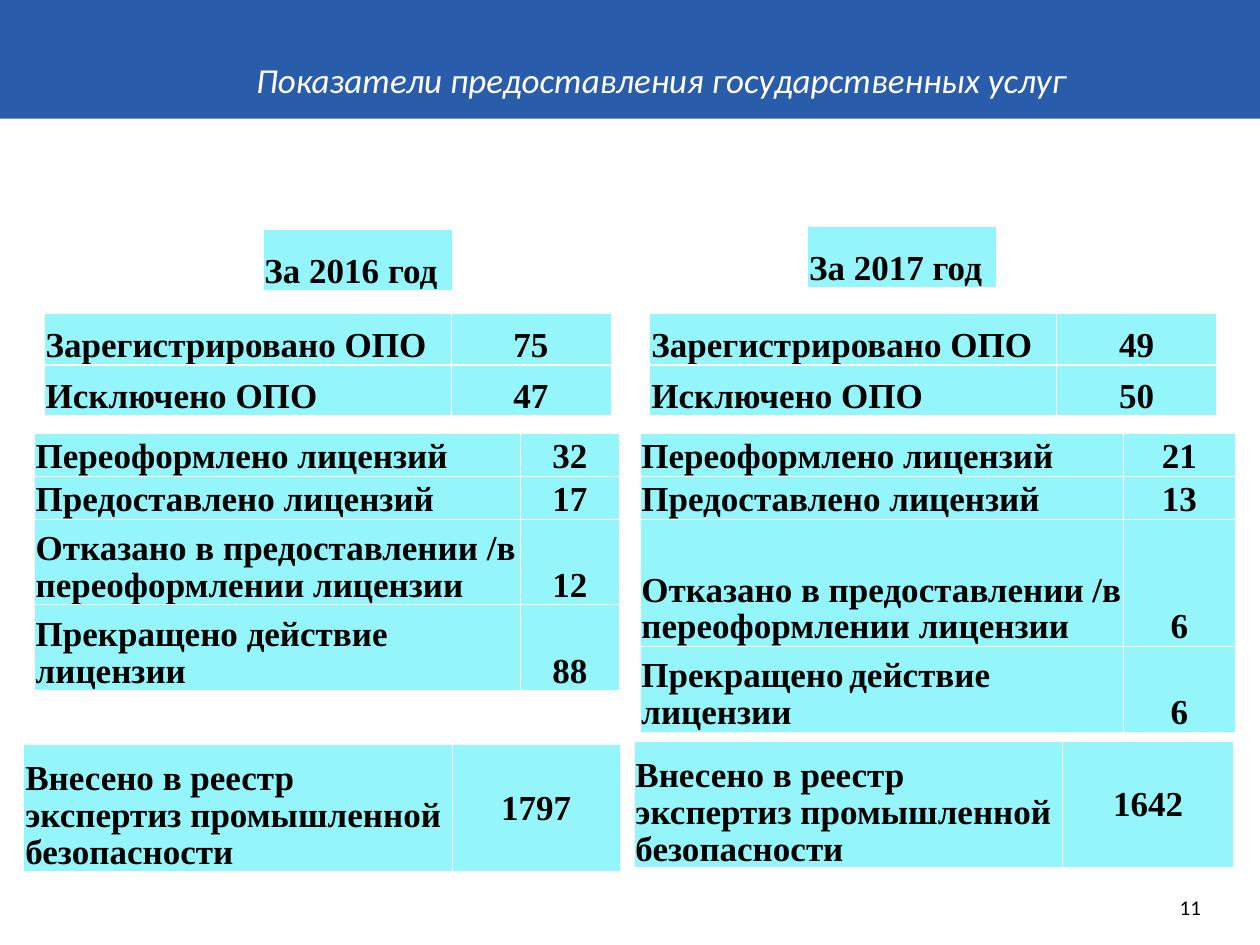
"""Builds the slide that compares public service figures for 2016 and 2017."""
import pptx
import pptx.dml.color
import pptx.enum.text
import pptx.oxml
import pptx.oxml.ns
import pptx.util

Cm = pptx.util.Cm
Pt = pptx.util.Pt
Align = pptx.enum.text.PP_ALIGN
Anchor = pptx.enum.text.MSO_ANCHOR

HUES = {"band": "2A5CAC", "cell": "94F5FA", "ink": "000000", "white": "FFFFFF"}
SERIF = "Times New Roman"
SANS = "Calibri"


def tint(name):
    return pptx.dml.color.RGBColor.from_string(HUES[name])


class Deck:
    """Holds the style and the current slide."""

    def __init__(self):
        self.file = pptx.Presentation()
        self.file.slide_width = Cm(25.4)
        self.file.slide_height = Cm(19.05)
        self.slide = self.file.slides.add_slide(self.file.slide_layouts[5])

    def run(self, para, text, size, face, hue="ink", bold=False, slant=False):
        run = para.add_run()
        run.text = text
        font = run.font
        font.size, font.name = Pt(size), face
        font.bold, font.italic = bold, slant
        font.color.rgb = tint(hue)

    def inset(self, frame, left=0, top=0, right=0, bottom=0):
        frame.margin_left, frame.margin_right = Cm(left), Cm(right)
        frame.margin_top, frame.margin_bottom = Cm(top), Cm(bottom)

    def title(self, text):
        shape = self.slide.shapes.title
        shape.left, shape.top = Cm(0), Cm(0)
        shape.width, shape.height = self.file.slide_width, Cm(2.39)
        shape.fill.solid()
        shape.fill.fore_color.rgb = tint("band")
        frame = shape.text_frame
        frame.auto_size = pptx.enum.text.MSO_AUTO_SIZE.NONE
        frame.vertical_anchor = Anchor.BOTTOM
        self.inset(frame, left=1.52, right=0.25, bottom=0.36)
        para = frame.paragraphs[0]
        para.alignment = Align.CENTER
        self.run(para, text, 20, SANS, "white", slant=True)

    def number(self, text):
        box = self.slide.shapes.add_textbox(Cm(22.1), Cm(18.03), Cm(2.11), Cm(1.02))
        frame = box.text_frame
        frame.word_wrap = True
        self.inset(frame)
        para = frame.paragraphs[0]
        para.alignment = Align.RIGHT
        self.run(para, text, 12, SANS)

    def edge(self, cell, side, width):
        line = pptx.oxml.parse_xml(
            f'<a:ln{side} {pptx.oxml.ns.nsdecls("a")} w="{Pt(width)}"><a:solidFill>'
            f'<a:srgbClr val="{HUES["white"]}"/></a:solidFill></a:ln{side}>')
        cell._tc.get_or_add_tcPr().append(line)

    def cell(self, cell, parts, thick, centred, anchor):
        for side in "LRTB":
            self.edge(cell, side, 1.47 if side == thick else 0.45)
        cell.fill.solid()
        cell.fill.fore_color.rgb = tint("cell")
        self.inset(cell, left=0.03, top=0.04, right=0.03)
        cell.vertical_anchor = anchor
        para = cell.text_frame.paragraphs[0]
        para.line_spacing = 0.95
        para.alignment = Align.CENTER if centred else Align.LEFT
        for part in parts:
            if part == " ":
                self.run(para, part, 14, "Cambria")
            else:
                self.run(para, part, 20, SERIF, bold=True)

    def table(self, left, top, cols, rows, data, middle=False):
        shape = self.slide.shapes.add_table(
            len(rows), len(cols), Cm(left), Cm(top), Cm(sum(cols)), Cm(sum(rows)))
        table = shape.table
        table.first_row = table.horz_banding = False
        for col, width in zip(table.columns, cols):
            col.width = Cm(width)
        for row, height in zip(table.rows, rows):
            row.height = Cm(height)
        for i, line in enumerate(data):
            thick = "BT"[i] if len(rows) < 3 else ""
            for j, parts in enumerate(line):
                anchor = Anchor.MIDDLE if middle and j else Anchor.BOTTOM
                self.cell(table.cell(i, j), parts, thick, j > 0, anchor)


def pairs(names, counts):
    return [(name, [count]) for name, count in zip(names, counts)]


def main():
    deck = Deck()
    deck.title("Показатели предоставления государственных услуг")
    sites = [["Зарегистрировано ОПО"], ["Исключено ОПО"]]
    grants = [["Переоформлено лицензий"], ["Предоставлено лицензий"],
              ["Отказано в предоставлении /в переоформлении лицензии"]]
    ended = ["Прекращено действие лицензии"]
    split = ["Прекращено", " ", "действие", " ", "лицензии"]
    checks = [["Внесено в реестр экспертиз промышленной безопасности"]]

    for left, top, year in ((5.3, 4.62, "2016"), (16.28, 4.57, "2017")):
        deck.table(left, top, [3.81], [1.24], [([f"За {year} год"],)])
    for left, counts in ((0.89, ["75", "47"]), (13.1, ["49", "50"])):
        deck.table(left, 6.32, [8.2, 3.23], [1.04, 1.02], pairs(sites, counts))
    for left, cols, high, last, counts in (
            (0.69, [9.8, 2], 1.73, ended, ["32", "17", "12", "88"]),
            (12.9, [9.74, 2.27], 2.57, split, ["21", "13", "6", "6"])):
        deck.table(left, 8.74, cols, [0.86, 0.86, high, 1.73],
                   pairs(grants + [last], counts))
    for left, top, width, count in (
            (0.48, 15.01, 3.38, "1797"), (12.78, 14.94, 3.45, "1642")):
        deck.table(left, top, [8.64, width], [2.57], pairs(checks, [count]), True)
    deck.number("11")
    deck.file.save("out.pptx")


if __name__ == "__main__":
    main()
